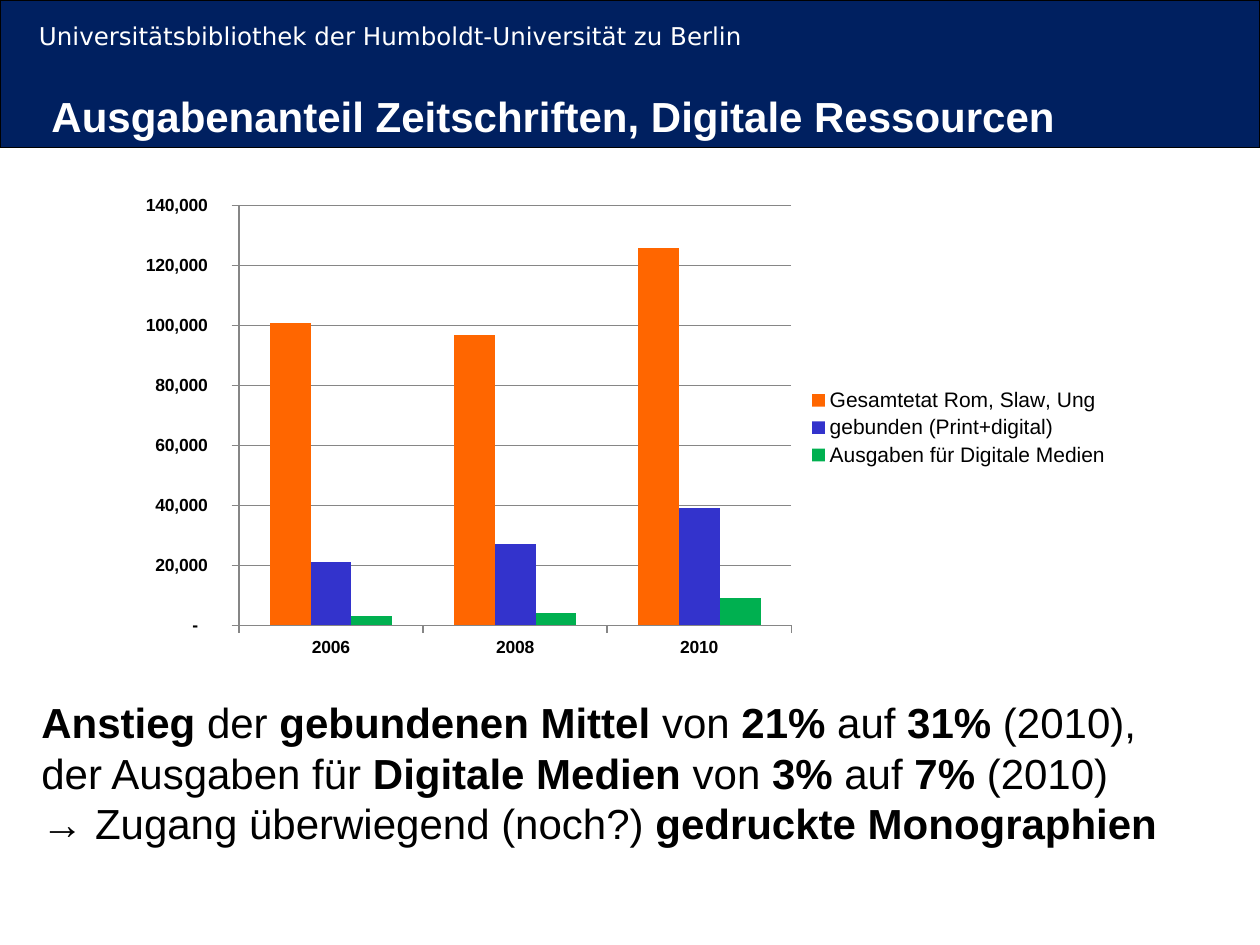
from dataclasses import dataclass

from lxml import etree
from pptx import Presentation
from pptx.chart.data import CategoryChartData as Data
from pptx.dml.color import RGBColor as Color
from pptx.enum.chart import XL_CHART_TYPE as Kind
from pptx.enum.chart import XL_LEGEND_POSITION as Spot
from pptx.enum.chart import XL_TICK_MARK as Tick
from pptx.enum.shapes import MSO_SHAPE as Form
from pptx.enum.text import MSO_AUTO_SIZE as Fit
from pptx.oxml.ns import qn
from pptx.util import Inches, Pt


@dataclass(frozen=True)
class Theme:
    navy: str = "002060"
    white: str = "FFFFFF"
    black: str = "000000"
    gray: str = "868686"
    bars: tuple = ("FF6600", "3333CC", "00B050")
    sans: str = "Arial"
    head: str = "DejaVu Sans"
    big: int = 24
    mid: int = 14
    key: int = 12
    small: int = 10
    thin: float = 0.75


class Page:
    COLS, ROWS = 100, 75

    def __init__(self, deck, theme):
        self.theme = theme
        self.shapes = deck.slides.add_slide(deck.slide_layouts[6]).shapes
        self.col = deck.slide_width / self.COLS
        self.row = deck.slide_height / self.ROWS

    def place(self, x, y, w, h):
        return [int(n) for n in (x * self.col, y * self.row, w * self.col, h * self.row)]

    def stroke(self, line, color):
        line.color.rgb = Color.from_string(color)
        line.width = Pt(self.theme.thin)

    def band(self, *area):
        box = self.shapes.add_shape(Form.RECTANGLE, *self.place(*area))
        box.shadow.inherit = False
        box.fill.solid()
        box.fill.fore_color.rgb = Color.from_string(self.theme.navy)
        self.stroke(box.line, self.theme.black)

    def style(self, font, size, color, face=None, bold=False):
        font.size, font.bold = Pt(size), bold
        font.name = face or self.theme.sans
        font.color.rgb = Color.from_string(color)

    def text(self, area, lines, size, color, face=None, inset=None):
        frame = self.shapes.add_textbox(*self.place(*area)).text_frame
        frame.word_wrap = True
        frame.auto_size = Fit.SHAPE_TO_FIT_TEXT
        if inset:
            frame.margin_left = frame.margin_right = Inches(inset[0])
            frame.margin_top = frame.margin_bottom = Inches(inset[1])
        for i, line in enumerate(lines):
            para = frame.add_paragraph() if i else frame.paragraphs[0]
            for words, bold in line:
                run = para.add_run()
                run.text = words
                self.style(run.font, size, color, face, bold)

    def chart(self, area, cats, rows, top, step, mask, plot):
        theme = self.theme
        data = Data(number_format="#,##0")
        data.categories = cats
        for name, vals in rows:
            data.add_series(name, vals)
        chart = self.shapes.add_chart(Kind.COLUMN_CLUSTERED, *self.place(*area), data).chart
        self.style(chart.font, theme.small, theme.black)
        chart.has_title = False
        chart.has_legend = True
        chart.legend.position = Spot.RIGHT
        chart.legend.include_in_layout = False
        self.style(chart.legend.font, theme.key, theme.black)

        group = chart.plots[0]
        group.gap_width, group.overlap = 150, 0
        group.vary_by_categories = False
        for series, color in zip(group.series, theme.bars):
            series.format.fill.solid()
            series.format.fill.fore_color.rgb = Color.from_string(color)
            series.invert_if_negative = False

        for axis in (chart.category_axis, chart.value_axis):
            axis.major_tick_mark, axis.minor_tick_mark = Tick.OUTSIDE, Tick.NONE
            self.style(axis.tick_labels.font, theme.small, theme.black, bold=True)
            self.stroke(axis.format.line, theme.gray)
        value = chart.value_axis
        value.minimum_scale, value.maximum_scale, value.major_unit = 0, top, step
        value.has_major_gridlines = True
        self.stroke(value.major_gridlines.format.line, theme.gray)
        value.tick_labels.number_format = mask
        value.tick_labels.number_format_is_linked = False
        self.layout(chart, plot)

    def layout(self, chart, plot):
        root = chart.plots[0]._element.getparent()
        for old in root.findall(qn("c:layout")):
            root.remove(old)
        outer = etree.Element(qn("c:layout"))
        root.insert(0, outer)
        inner = etree.SubElement(outer, qn("c:manualLayout"))
        marks = [("layoutTarget", "inner"), ("xMode", "edge"), ("yMode", "edge")]
        for tag, val in marks + list(zip("xywh", plot)):
            etree.SubElement(inner, qn("c:" + tag)).set("val", str(val))


def main():
    deck = Presentation()
    deck.slide_width, deck.slide_height = Inches(10), Inches(7.5)
    theme = Theme()
    page = Page(deck, theme)
    page.band(0, 0, 100, 11.7)
    page.text((2.5, 1.6, 60, 2.6),
              [[("Universitätsbibliothek der Humboldt-Universität zu Berlin", False)]],
              theme.mid, theme.white, theme.head, (0.06, 0.01))
    page.text((3.1, 6.7, 85.2, 5),
              [[("Ausgabenanteil Zeitschriften, Digitale Ressourcen", True)]],
              theme.big, theme.white)
    page.chart((9.4, 14.8, 79.7, 38.3), ("2006", "2008", "2010"),
               [("Gesamtetat Rom, Slaw, Ung", (101000, 97000, 126000)),
                ("gebunden (Print+digital)", (21000, 27000, 39000)),
                ("Ausgaben für Digitale Medien", (3000, 4000, 9000))],
               140000, 20000,
               r'_-* #,##0\ _€_-;\-* #,##0\ _€_-;_-* "-"?\ _€_-',
               (0.12, 0.04, 0.55, 0.87))
    page.text((2.3, 54.8, 94.5, 13.1), [
        [("Anstieg", True), (" der ", False), ("gebundenen Mittel ", True),
         ("von ", False), ("21%", True), (" auf ", False), ("31%", True),
         (" (2010),", False)],
        [("der Ausgaben für ", False), ("Digitale Medien ", True),
         ("von ", False), ("3%", True), (" auf ", False), ("7%", True),
         (" (2010)", False)],
        [("→ ", True), ("Zugang überwiegend (noch?) ", False),
         ("gedruckte Monographien", True)],
    ], theme.big, theme.black)
    deck.save("out.pptx")


if __name__ == "__main__":
    main()
